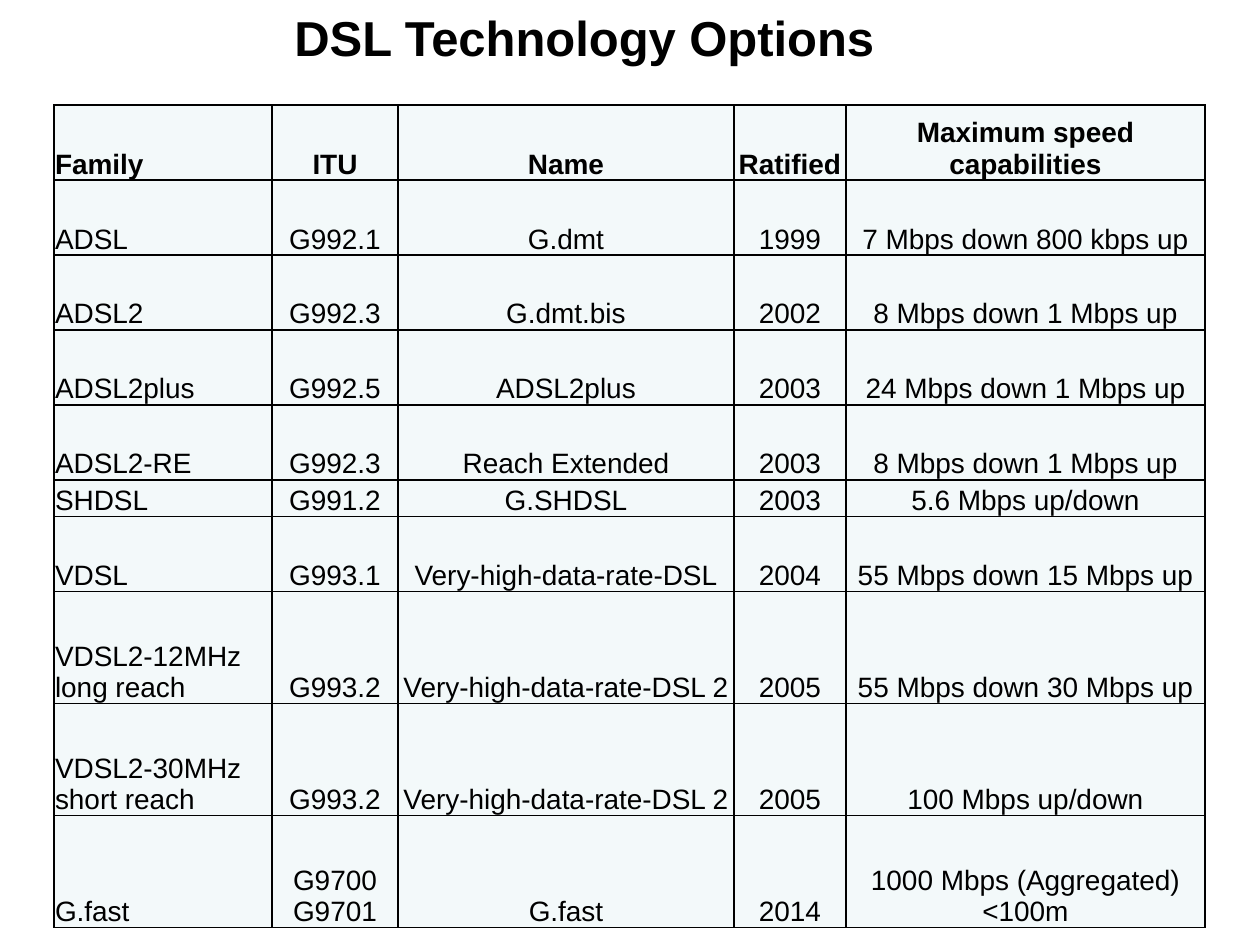
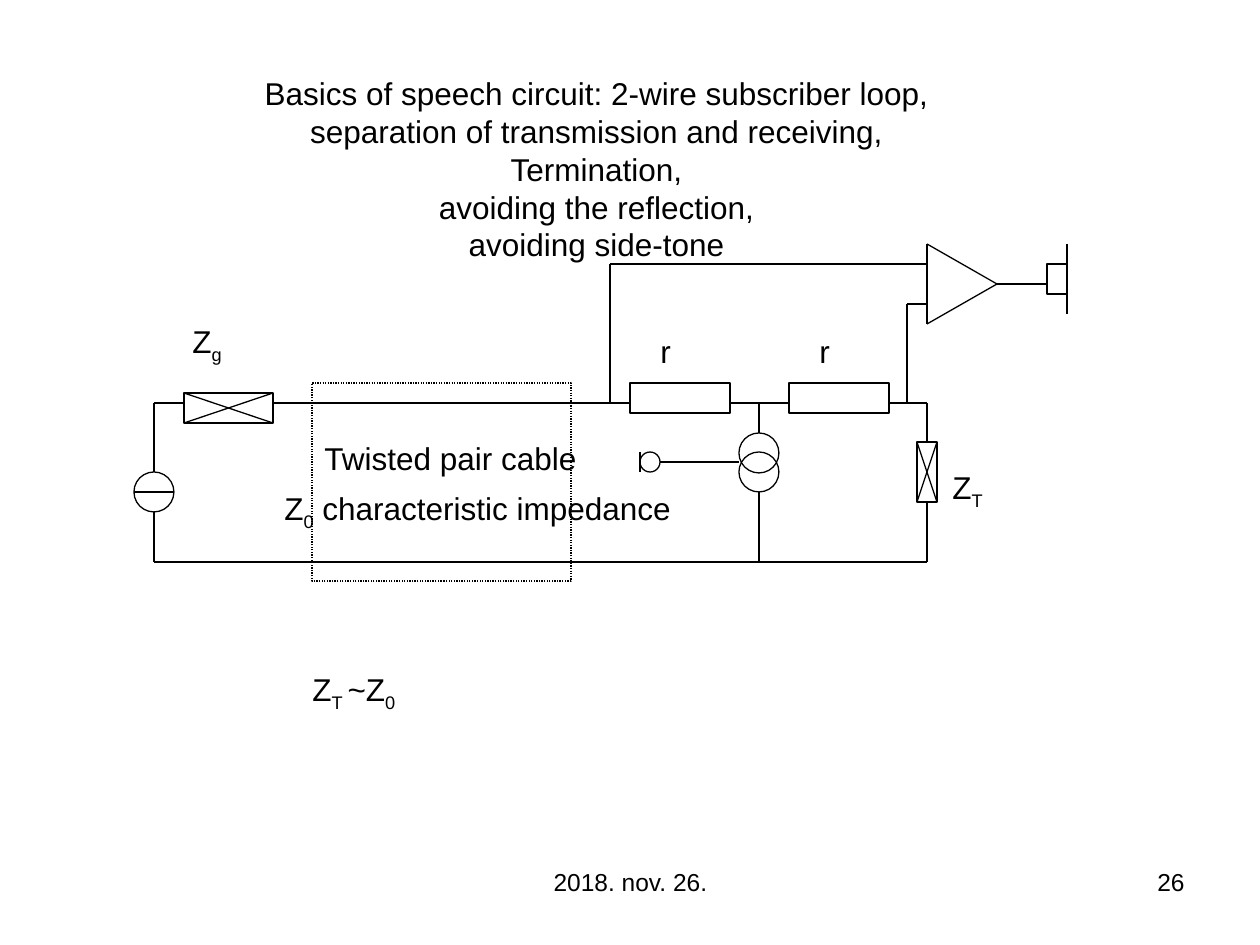
from dataclasses import dataclass
from itertools import pairwise

from lxml.etree import SubElement
from pptx import Presentation
from pptx.dml.color import RGBColor
from pptx.enum.dml import MSO_LINE
from pptx.enum.shapes import MSO_CONNECTOR, MSO_SHAPE
from pptx.enum.text import MSO_ANCHOR, PP_ALIGN
from pptx.oxml import parse_xml
from pptx.oxml.ns import nsdecls, qn
from pptx.util import Emu, Pt


@dataclass(frozen=True)
class Theme:
    ink: RGBColor = RGBColor(0, 0, 0)
    paper: RGBColor = RGBColor(255, 255, 255)
    tint: RGBColor = RGBColor(0xF3, 0xF9, 0xFA)
    font: str = "Arial"
    title: int = 28
    body: int = 18
    cell: int = 16
    foot: int = 14
    wire: float = 0.75
    rule: float = 1


THEME = Theme()
LEFT, MID, RIGHT = PP_ALIGN.LEFT, PP_ALIGN.CENTER, PP_ALIGN.RIGHT

HEADS = ["Family", "ITU", "Name", "Ratified", "Maximum speed capabilities"]
ROWS = [
    ["ADSL", "G992.1", "G.dmt", "1999", "7 Mbps down 800 kbps up"],
    ["ADSL2", "G992.3", "G.dmt.bis", "2002", "8 Mbps down 1 Mbps up"],
    ["ADSL2plus", "G992.5", "ADSL2plus", "2003", "24 Mbps down 1 Mbps up"],
    ["ADSL2-RE", "G992.3", "Reach Extended", "2003", "8 Mbps down 1 Mbps up"],
    ["SHDSL", "G991.2", "G.SHDSL", "2003", "5.6 Mbps up/down"],
    ["VDSL", "G993.1", "Very-high-data-rate-DSL", "2004", "55 Mbps down 15 Mbps up"],
    ["VDSL2-12MHz long reach", "G993.2", "Very-high-data-rate-DSL 2", "2005",
     "55 Mbps down 30 Mbps up"],
    ["VDSL2-30MHz short reach", "G993.2", "Very-high-data-rate-DSL 2", "2005",
     "100 Mbps up/down"],
    ["G.fast", "G9700 G9701", "G.fast", "2014", "1000 Mbps (Aggregated) <100m"],
]
WIDTHS = [218, 126, 336, 112, 359]
HEIGHTS = [75] * 5 + [37, 75] + [112] * 3

TOPIC = [
    "Basics of speech circuit: 2-wire subscriber loop, ",
    " separation of transmission and receiving, ",
    "Termination,",
    " avoiding the reflection, ",
    "avoiding side-tone",
]


def px(n):
    return Emu(round(n * 914400 / 126))


# Text: pieces between underscores are set as subscripts
def write(frame, lines, size, align=LEFT, bold=False):
    for i, line in enumerate(lines):
        para = frame.paragraphs[0] if i == 0 else frame.add_paragraph()
        para.alignment = align
        for j, piece in enumerate(line.split("_")):
            if not piece:
                continue
            run = para.add_run()
            run.text = piece
            font = run.font
            font.name, font.size, font.bold = THEME.font, Pt(size), bold
            font.color.rgb = THEME.ink
            if j % 2:
                run._r.get_or_add_rPr().set("baseline", "-25000")


def label(slide, box, lines, size=THEME.body, align=LEFT, bold=False, wrap=False):
    frame = slide.shapes.add_textbox(*map(px, box)).text_frame
    frame.word_wrap = wrap
    write(frame, lines, size, align, bold)


def footer(slide, date, page):
    label(slide, (431, 861, 399, 66), [date], THEME.foot, MID, wrap=True)
    label(slide, (903, 861, 294, 66), [page], THEME.foot, RIGHT, wrap=True)


# Table of options
def edge(cell):
    props = cell._tc.get_or_add_tcPr()
    for i, side in enumerate("LRTB"):
        props.insert(i, parse_xml(
            f'<a:ln{side} {nsdecls("a")} w="{Pt(THEME.rule)}"><a:solidFill>'
            f'<a:srgbClr val="{THEME.ink}"/></a:solidFill></a:ln{side}>'))


def grid(slide, box):
    data = [HEADS] + ROWS
    table = slide.shapes.add_table(len(data), len(HEADS), *map(px, box)).table
    table.first_row = table.horz_banding = False
    for col, width in zip(table.columns, WIDTHS):
        col.width = px(width)
    for row, height in zip(table.rows, HEIGHTS):
        row.height = px(height)
    for r, texts in enumerate(data):
        for c, text in enumerate(texts):
            cell = table.cell(r, c)
            cell.fill.solid()
            cell.fill.fore_color.rgb = THEME.tint
            edge(cell)
            cell.margin_left = cell.margin_right = cell.margin_top = px(1)
            cell.margin_bottom = 0
            cell.vertical_anchor = MSO_ANCHOR.BOTTOM
            write(cell.text_frame, [text], THEME.cell, MID if c else LEFT, r == 0)


# Circuit drawn from the top left corner of its box
class Circuit:
    def __init__(self, slide, box):
        self.slide = slide
        self.left, self.top = box[:2]

    def shift(self, x, y):
        return self.left + x, self.top + y

    def wire(self, *points):
        lines = []
        for start, end in pairwise(points):
            ends = map(px, self.shift(*start) + self.shift(*end))
            line = self.slide.shapes.add_connector(MSO_CONNECTOR.STRAIGHT, *ends)
            line.line.color.rgb = THEME.ink
            line.line.width = Pt(THEME.wire)
            SubElement(line._element.spPr, qn("a:effectLst"))
            lines.append(line)
        return lines

    def block(self, x, y, w, h, kind=MSO_SHAPE.RECTANGLE, solid=False):
        shape = self.slide.shapes.add_shape(kind, *map(px, (*self.shift(x, y), w, h)))
        shape.shadow.inherit = False
        if solid:
            shape.fill.solid()
            shape.fill.fore_color.rgb = THEME.paper
        else:
            shape.fill.background()
        shape.line.color.rgb = THEME.ink
        shape.line.width = Pt(THEME.wire)
        return shape

    def ring(self, x, y, size, solid=False):
        return self.block(x, y, size, size, MSO_SHAPE.OVAL, solid)

    def load(self, x, y, w, h):
        box = self.block(x, y, w, h)
        self.wire((x, y), (x + w, y + h))
        self.wire((x + w, y), (x, y + h))
        return box

    def note(self, x, y, w, text, wrap=False):
        label(self.slide, (*self.shift(x, y), w, 50), [text], wrap=wrap)


def source(c, line, base):
    c.ring(0, 228, 40)
    c.wire((0, 248), (40, 248))
    c.wire((20, 228), (20, line), (50, line))
    c.wire((20, 268), (20, base))
    c.load(50, 149, 89, 30)
    c.note(46, 72, 57, "Z_g_")


def bridge(c, line, base):
    for x in (496, 655):
        c.block(x, 139, 100, 30, solid=True)
        c.note(x + 18, 82, 35, "r")
    c.wire((596, line), (655, line))
    # Coupled current source with microphone
    c.ring(605, 189, 40, solid=True)
    c.ring(605, 208, 40)
    c.wire((625, line), (625, 189))
    c.wire((625, 248), (625, base))
    c.ring(506, 208, 20)
    c.wire((506, 208), (506, 228))
    c.wire((526, 218), (605, 218))


def ending(c, line, base):
    load = c.load(783, 198, 20, 60)
    c.wire((755, line), (793, line))
    drop, = c.wire((793, line), (793, 198))
    drop.end_connect(load, 0)
    back, = c.wire((793, 258), (793, base))
    back.begin_connect(load, 2)
    c.note(806, 218, 67, "Z_T_", wrap=True)


def amp(c, line):
    c.wire((793, 0), (793, 80), (863, 40), (793, 0))
    c.wire((476, line), (476, 20), (793, 20))
    c.wire((773, line), (773, 60), (793, 60))
    # Earpiece
    c.block(913, 20, 20, 30)
    c.wire((933, 0), (933, 70))
    c.wire((863, 40), (913, 40))


def cable(c):
    frame = c.block(178, 139, 259, 198)
    frame.line.dash_style = MSO_LINE.ROUND_DOT
    c.note(178, 189, 280, "Twisted pair cable")
    c.note(138, 239, 413, "Z_0_ characteristic impedance")


def loop(slide, box):
    c = Circuit(slide, box)
    line, base = 159, 318
    c.wire((139, line), (496, line))
    c.wire((20, base), (793, base))
    source(c, line, base)
    bridge(c, line, base)
    ending(c, line, base)
    amp(c, line)
    cable(c)


def main():
    deck = Presentation()
    deck.slide_width, deck.slide_height = px(1260), px(945)
    blank = deck.slide_layouts[6]

    # DSL options
    slide = deck.slides.add_slide(blank)
    grid(slide, (54, 105, sum(WIDTHS), sum(HEIGHTS)))
    label(slide, (282, 1, 612, 72), ["DSL Technology Options"], THEME.title, bold=True)

    # Speech circuit
    slide = deck.slides.add_slide(blank)
    footer(slide, "2018. nov. 26.", "26")
    loop(slide, (134, 244, 933, 337))
    label(slide, (248, 68, 697, 239), TOPIC, align=MID)
    label(slide, (300, 664, 116, 50), ["Z_T _~Z_0_"])

    deck.save("out.pptx")


if __name__ == "__main__":
    main()
